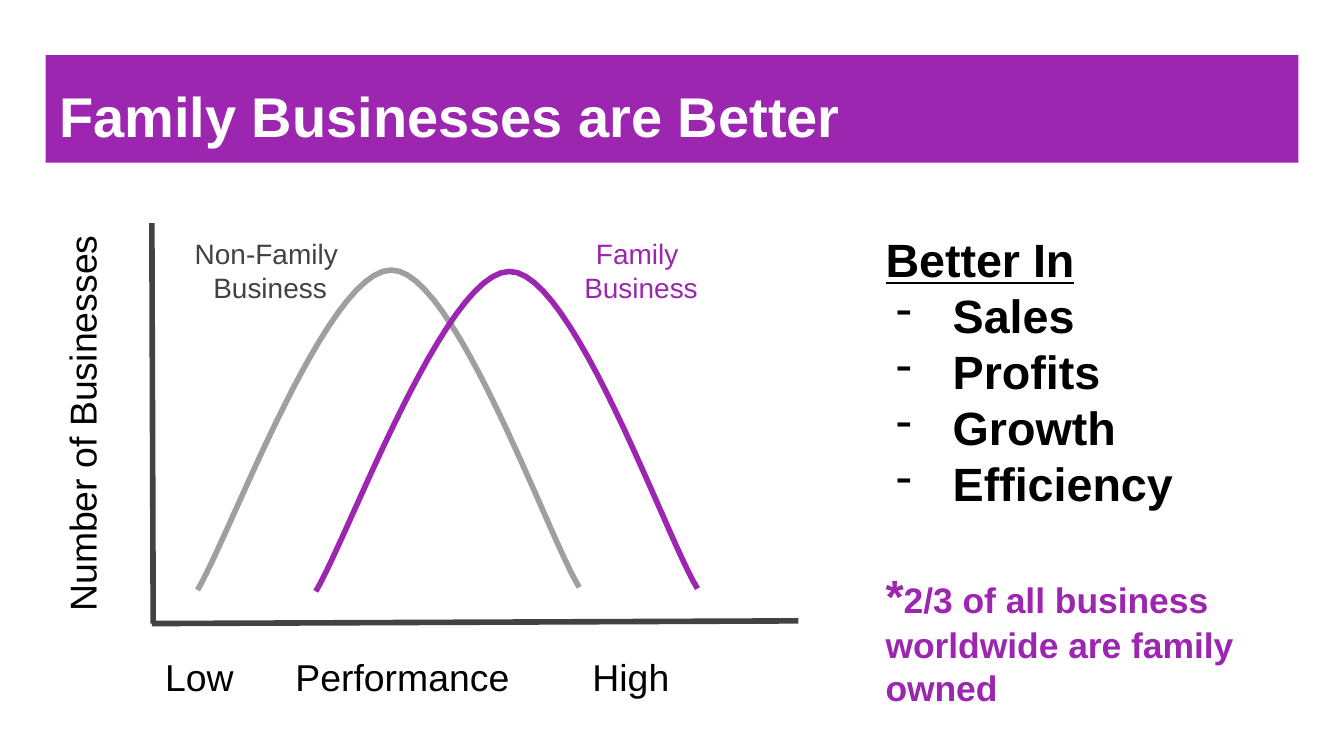
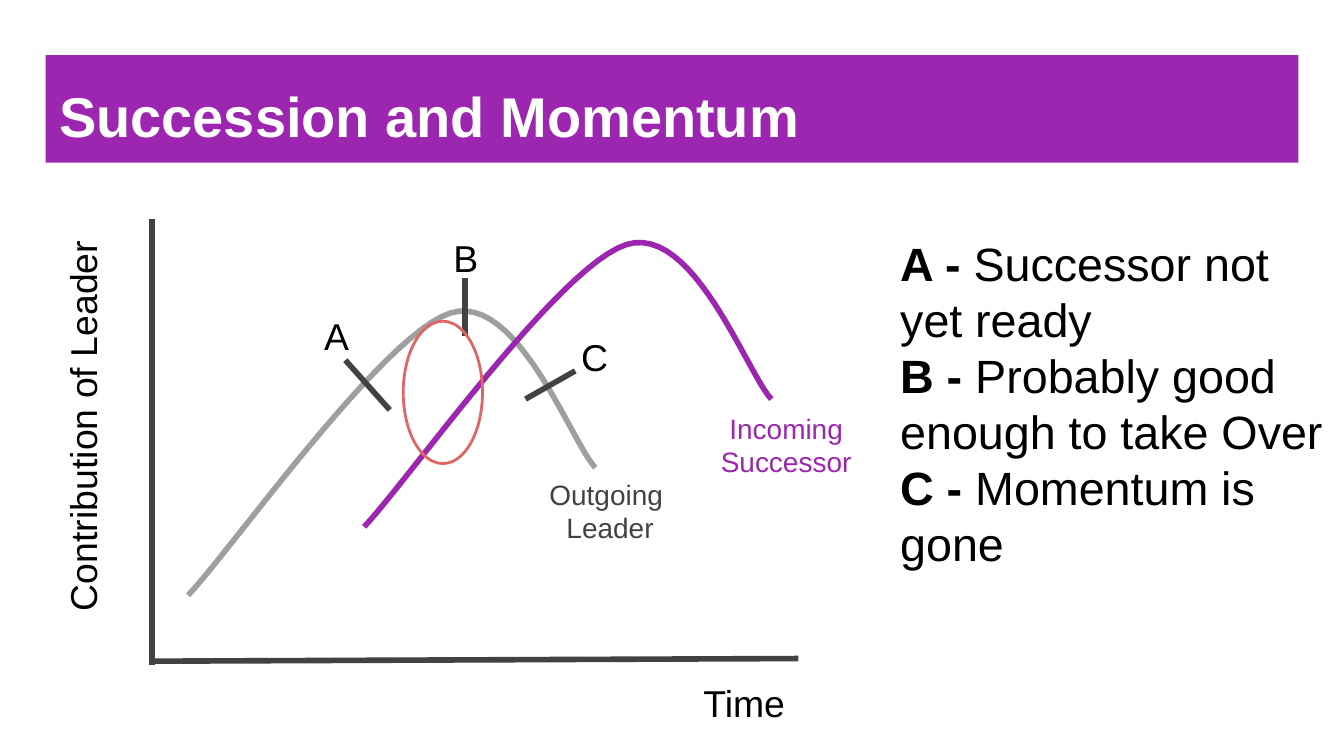
from dataclasses import dataclass

import lxml.etree
import pptx
import pptx.dml.color
import pptx.enum.shapes
import pptx.enum.text
import pptx.oxml
import pptx.oxml.ns
import pptx.util

RGBColor = pptx.dml.color.RGBColor
ALIGN = pptx.enum.text.PP_ALIGN
ANCHOR = pptx.enum.text.MSO_ANCHOR

PURPLE = RGBColor(0x9C, 0x26, 0xB0)
WHITE = RGBColor(0xFF, 0xFF, 0xFF)
BLACK = RGBColor(0, 0, 0)
DARK = RGBColor(0x42, 0x42, 0x42)
GREY = RGBColor(0x9F, 0x9F, 0x9F)
RED = RGBColor(0xE0, 0x66, 0x66)

SLIDE_WIDTH = pptx.util.Inches(10)
SLIDE_HEIGHT = SLIDE_WIDTH * 9 // 16
COLUMNS = 100
UNIT = SLIDE_WIDTH / COLUMNS
CURVE_STEPS = 24

FRAME = {
    "word_wrap": True,
    "auto_size": pptx.enum.text.MSO_AUTO_SIZE.NONE,
    **{f"margin_{side}": pptx.util.Inches(0.1) for side in ("left", "top", "right", "bottom")},
}
TITLE = {"name": "Arial", "size": pptx.util.Pt(30), "bold": True}
BODY = {"name": "Arial", "size": pptx.util.Pt(25)}
STRONG = {**BODY, "bold": True}
HEADING = {**STRONG, "underline": True}
REMARK = {**STRONG, "size": pptx.util.Pt(19)}
AXIS = {"name": "Arial", "size": pptx.util.Pt(20)}
LABEL = {"name": "Arial", "size": pptx.util.Pt(15)}


@dataclass
class Box:
    left: float
    top: float
    width: float
    height: float

    def inner(self, left, top, width, height):
        return Box(self.left + left, self.top + top, width, height)

    def point(self, x, y):
        return grid(self.left + x), grid(self.top + y)

    def lengths(self):
        return [grid(value) for value in (self.left, self.top, self.width, self.height)]


TITLE_BAND = Box(3.4, 4.1, 93.2, 8)
PLOT = Box(10, 16, 50, 40)
BETTER_IN = Box(64.9, 16.2, 28.5, 23.8)
STAGES = Box(66, 16.5, 34, 30.9)


def grid(value):
    return round(value * UNIT)


def apply(target, values):
    for name, value in values.items():
        setattr(target, name, value)


def add_run(paragraph, text, values, color):
    run = paragraph.add_run()
    run.text = text
    apply(run.font, values)
    run.font.color.rgb = color


def add_frame(slide, box):
    shape = slide.shapes.add_textbox(*box.lengths())
    apply(shape.text_frame, FRAME)
    return shape


def add_text(slide, box, text, values, color=BLACK, alignment=ALIGN.LEFT, rotation=0):
    shape = add_frame(slide, box)
    shape.rotation = rotation
    frame = shape.text_frame
    for index, line in enumerate(text.split("\n")):
        paragraph = frame.add_paragraph() if index else frame.paragraphs[0]
        paragraph.alignment = alignment
        add_run(paragraph, line, values, color)
    return shape


def add_body(slide, box, paragraphs):
    frame = add_frame(slide, box).text_frame
    for index, runs in enumerate(paragraphs):
        paragraph = frame.add_paragraph() if index else frame.paragraphs[0]
        for text, values, color in runs:
            add_run(paragraph, text, values, color)
    return frame.paragraphs


def add_dash(paragraph):
    properties = paragraph._p.get_or_add_pPr()
    properties.set("marL", str(pptx.util.Inches(0.5)))
    properties.set("indent", str(pptx.util.Inches(-0.42)))
    bullet = lxml.etree.SubElement(properties, pptx.oxml.ns.qn("a:buChar"))
    bullet.set("char", "-")


def add_tab_stops(paragraph, positions):
    properties = paragraph._p.get_or_add_pPr()
    stops = lxml.etree.SubElement(properties, pptx.oxml.ns.qn("a:tabLst"))
    for position in positions:
        stop = lxml.etree.SubElement(stops, pptx.oxml.ns.qn("a:tab"))
        stop.set("pos", str(grid(position)))
        stop.set("algn", "l")


def add_line(slide, box, start, end):
    straight = pptx.enum.shapes.MSO_CONNECTOR.STRAIGHT
    connector = slide.shapes.add_connector(straight, *box.point(*start), *box.point(*end))
    connector.line.color.rgb = DARK
    connector.line.width = pptx.util.Pt(3)
    lxml.etree.SubElement(connector._element.spPr, pptx.oxml.ns.qn("a:effectLst"))


def outline(shape, color, width):
    shape.shadow.inherit = False
    shape.fill.background()
    shape.line.color.rgb = color
    shape.line.width = pptx.util.Pt(width)


def bezier(controls, share):
    rest = 1 - share
    weights = (rest**3, 3 * rest**2 * share, 3 * rest * share**2, share**3)
    return tuple(sum(w * point[axis] for w, point in zip(weights, controls)) for axis in (0, 1))


def add_curve(slide, box, controls, color):
    points = [
        box.point(*bezier(controls[first:first + 4], step / CURVE_STEPS))
        for first in range(0, len(controls) - 1, 3)
        for step in range(1, CURVE_STEPS + 1)
    ]
    builder = slide.shapes.build_freeform(*box.point(*controls[0]))
    builder.add_line_segments(points, close=False)
    outline(builder.convert_to_shape(), color, 3)


def add_curve_pair(slide, box, controls, shift):
    add_curve(slide, box, controls, GREY)
    shifted = box.inner(*shift, box.width, box.height)
    add_curve(slide, shifted, controls, PURPLE)


def add_title_slide(presentation, title):
    slide = presentation.slides.add_slide(presentation.slide_layouts[5])
    shape = slide.shapes.title
    apply(shape, dict(zip(("left", "top", "width", "height"), TITLE_BAND.lengths())))
    shape.fill.solid()
    shape.fill.fore_color.rgb = PURPLE
    apply(shape.text_frame, {**FRAME, "vertical_anchor": ANCHOR.BOTTOM})
    paragraph = shape.text_frame.paragraphs[0]
    paragraph.alignment = ALIGN.LEFT
    add_run(paragraph, title, TITLE, WHITE)
    return slide


def add_performance_plot(slide, box):
    add_line(slide, box, (1.3, 0.6), (1.4, 30.4))
    add_line(slide, box, (49.4, 30.2), (1.3, 30.4))
    scale = add_text(slide, box.inner(1.3, 31.7, 48.1, 6.6), "Low\tPerformance\tHigh", AXIS)
    add_tab_stops(scale.text_frame.paragraphs[0], (9.7, 31.8))
    add_text(slide, box.inner(-18.5, 10.6, 31.8, 8), "Number of Businesses", AXIS, rotation=270)
    controls = [(4.7, 27.9), (7.1, 23.9), (14.3, 4.1), (19.1, 4.1),
                (23.8, 4), (30.7, 23.8), (33.1, 27.7)]
    add_curve_pair(slide, box, controls, (8.8, 0.1))
    for left, width, text, color in (
        (28.7, 18, "Family \nBusiness", PURPLE),
        (-0.3, 20.8, "Non-Family \nBusiness", DARK),
    ):
        add_text(slide, box.inner(left, 0.6, width, 6.6), text, LABEL, color, ALIGN.CENTER)


def add_better_in(slide, box):
    qualities = ("Sales", "Profits", "Growth", "Efficiency")
    paragraphs = add_body(slide, box, [
        [("Better In", HEADING, BLACK)],
        *[[(quality, STRONG, BLACK)] for quality in qualities],
        [("*", STRONG, PURPLE),
         ("2/3 of all business worldwide are family owned", REMARK, PURPLE)],
    ])
    for paragraph in paragraphs[1:-1]:
        add_dash(paragraph)
    paragraphs[-1].space_before = pptx.util.Pt(30)


def add_succession_plot(slide, box):
    add_line(slide, box, (1.3, 0.3), (1.3, 33.5))
    add_line(slide, box, (49.4, 33), (1.3, 33.2))
    add_text(slide, box.inner(28.6, 33.6, 20.8, 6.6), "Time", AXIS, alignment=ALIGN.RIGHT)
    add_text(slide, box.inner(-19.5, 11.6, 31.8, 5.9), "Contribution of Leader", AXIS, rotation=270)
    for area, text, color in (
        ((39.5, 13.6, 18, 6.6), "Incoming Successor", PURPLE),
        ((28.6, 18.5, 13.6, 6.6), "Outgoing \nLeader", DARK),
    ):
        add_text(slide, box.inner(*area), text, LABEL, color, ALIGN.CENTER)
    controls = [(4, 28.3), (7.3, 24.8), (18.5, 8.9), (23.5, 7.3),
                (28.5, 5.7), (32.5, 16.9), (34.3, 18.8)]
    add_curve_pair(slide, box, controls, (13.1, -5.1))
    for stage, corner, start, end in (
        ("A", (9.6, 6.3), (15.7, 10.8), (19, 14.5)),
        ("B", (19.2, 0.5), (24.6, 4.7), (24.6, 9)),
        ("C", (28.8, 7.9), (29.1, 13.7), (32.8, 11.6)),
    ):
        add_line(slide, box, start, end)
        add_text(slide, box.inner(*corner, 10.9, 6.6), stage, AXIS, alignment=ALIGN.CENTER)
    oval = pptx.enum.shapes.MSO_SHAPE.OVAL
    handover = slide.shapes.add_shape(oval, *box.inner(20, 7.9, 5.9, 10.6).lengths())
    outline(handover, RED, 1.5)


def add_stages(slide, box):
    stages = {
        "A - ": "Successor not yet ready",
        "B - ": "Probably good enough to take Over",
        "C - ": "Momentum is gone",
    }
    add_body(slide, box, [
        [(stage, STRONG, BLACK), (meaning, BODY, BLACK)] for stage, meaning in stages.items()
    ])


def main():
    presentation = pptx.Presentation()
    presentation.slide_width = SLIDE_WIDTH
    presentation.slide_height = SLIDE_HEIGHT

    slide = add_title_slide(presentation, "Family Businesses are Better")
    add_performance_plot(slide, PLOT)
    add_better_in(slide, BETTER_IN)

    slide = add_title_slide(presentation, "Succession and Momentum")
    add_succession_plot(slide, PLOT)
    add_stages(slide, STAGES)

    presentation.save("out.pptx")


if __name__ == "__main__":
    main()
